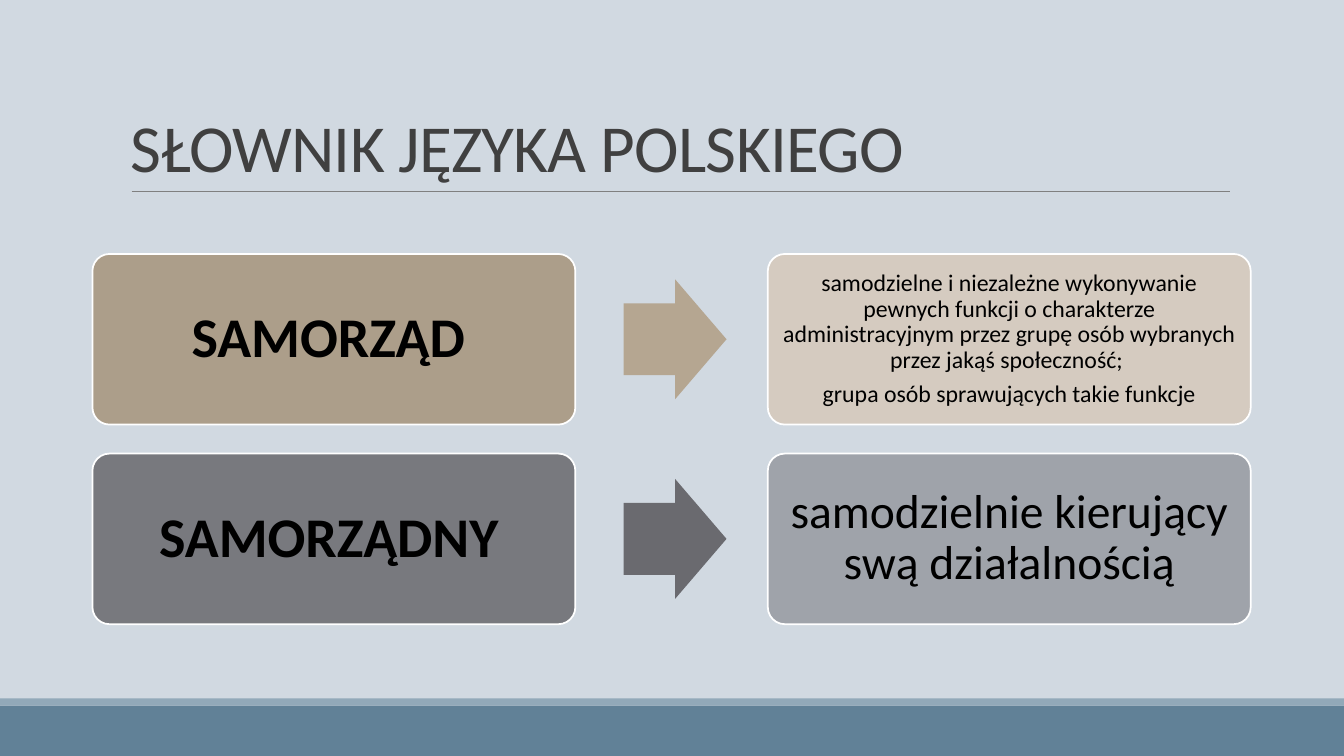
import pptx
import pptx.util
import pptx.dml.color
import pptx.enum.shapes
import pptx.enum.text
import pptx.oxml.ns
import lxml.etree

Cm, Pt = pptx.util.Cm, pptx.util.Pt
SHAPES = pptx.enum.shapes.MSO_SHAPE
ANCHOR = pptx.enum.text.MSO_ANCHOR
FONT = "Calibri"
COLORS = {
    "background": "D1D9E1", "footer": "618197", "footer_edge": "92A9B9",
    "rule": "808080", "title": "404040", "text": "000000", "outline": "FFFFFF",
    "tan": "AC9E8A", "tan_arrow": "B5A691", "tan_light": "D5CBC0",
    "gray": "6F6F74", "gray_arrow": "6A6A6F",
}


def add_block(kind, left, top, width, height, color, opacity=100):
    """Add a filled shape without outline or shadow."""
    shape = slide.shapes.add_shape(kind, Cm(left), Cm(top), Cm(width), Cm(height))
    shape.shadow.inherit = False
    shape.line.fill.background()
    shape.fill.solid()
    shape.fill.fore_color.rgb = pptx.dml.color.RGBColor.from_string(COLORS[color])
    if opacity < 100:
        color_element = shape.element.spPr.find(".//" + pptx.oxml.ns.qn("a:srgbClr"))
        alpha = lxml.etree.SubElement(color_element, pptx.oxml.ns.qn("a:alpha"))
        alpha.set("val", str(opacity * 1000))
    return shape


def write_text(shape, text, size, color, inset, anchor, spacing):
    """Fill a shape with text and format every run."""
    frame = shape.text_frame
    frame.word_wrap = True
    frame.vertical_anchor = anchor
    frame.margin_left = frame.margin_right = Cm(inset[0])
    frame.margin_top = frame.margin_bottom = Cm(inset[1])
    frame.text = text
    for paragraph in frame.paragraphs:
        paragraph.line_spacing = spacing
        for run in paragraph.runs:
            run.font.name = FONT
            run.font.size = Pt(size)
            run.font.color.rgb = pptx.dml.color.RGBColor.from_string(COLORS[color])
    return frame.paragraphs


presentation = pptx.Presentation()
presentation.slide_width, presentation.slide_height = Cm(33.87), Cm(19.05)
slide = presentation.slides.add_slide(presentation.slide_layouts[6])
slide.background.fill.solid()
slide.background.fill.fore_color.rgb = pptx.dml.color.RGBColor.from_string(COLORS["background"])

# Footer bands
add_block(SHAPES.RECTANGLE, 0, 17.78, 33.87, 1.27, "footer")
add_block(SHAPES.RECTANGLE, 0, 17.6, 33.87, 0.18, "footer_edge")

# Title and the rule under it
rule = slide.shapes.add_connector(
    pptx.enum.shapes.MSO_CONNECTOR.STRAIGHT, Cm(3.32), Cm(4.82), Cm(31), Cm(4.82))
rule.line.color.rgb = pptx.dml.color.RGBColor.from_string(COLORS["rule"])
rule.line.width = Pt(0.5)
lxml.etree.SubElement(rule.element.spPr, pptx.oxml.ns.qn("a:effectLst"))
title = slide.shapes.add_textbox(Cm(3.05), Cm(0.79), Cm(27.94), Cm(4.04))
title_paragraph = write_text(title, "SŁOWNIK JĘZYKA POLSKIEGO", 48, "title",
                             (0.25, 0.13), ANCHOR.BOTTOM, 0.85)[0]
title_paragraph.runs[0].font._element.set("spc", "-50")

# Each row: term, size of its trailing space, definition, size, inset, (fill, opacity) pairs
rows = [
    ("SAMORZĄD", 36,
     "samodzielne i niezależne wykonywanie pewnych funkcji o charakterze "
     "administracyjnym przez grupę osób wybranych przez jakąś społeczność; \n"
     "grupa osób sprawujących takie funkcje",
     17, 0.18, ("tan", 100), "tan_arrow", ("tan_light", 100)),
    ("SAMORZĄDNY", 32, "samodzielnie kierujący swą działalnością",
     34, 0.36, ("gray", 90), "gray_arrow", ("gray", 50)),
]
for index, (term, space_size, definition, size, inset, term_fill,
            arrow_fill, definition_fill) in enumerate(rows):
    top = 6.4 + index * 5.03
    cards = [(2.33, term, 40, 0.43, term_fill),
             (19.35, definition, size, inset, definition_fill)]
    for left, text, text_size, margin, fill in cards:
        card = add_block(SHAPES.ROUNDED_RECTANGLE, left, top, 12.17, 4.3, *fill)
        card.adjustments[0] = 0.1
        card.line.color.rgb = pptx.dml.color.RGBColor.from_string(COLORS["outline"])
        card.line.width = Pt(1.25)
        paragraphs = write_text(card, text, text_size, "text",
                                (margin, margin), ANCHOR.MIDDLE, 0.9)
        for paragraph in paragraphs:
            paragraph.alignment = pptx.enum.text.PP_ALIGN.CENTER
            paragraph.space_after = Pt(round(text_size * 0.35))
        if text == term:
            paragraphs[0].runs[0].font.bold = True
            space = paragraphs[0].add_run()
            space.text = " "
            space.font.name = FONT
            space.font.size = Pt(space_size)
    arrow = add_block(SHAPES.RIGHT_ARROW, 15.72, top + 0.64, 2.59, 3.02, arrow_fill)
    arrow.adjustments[0] = 0.6

presentation.save("out.pptx")
